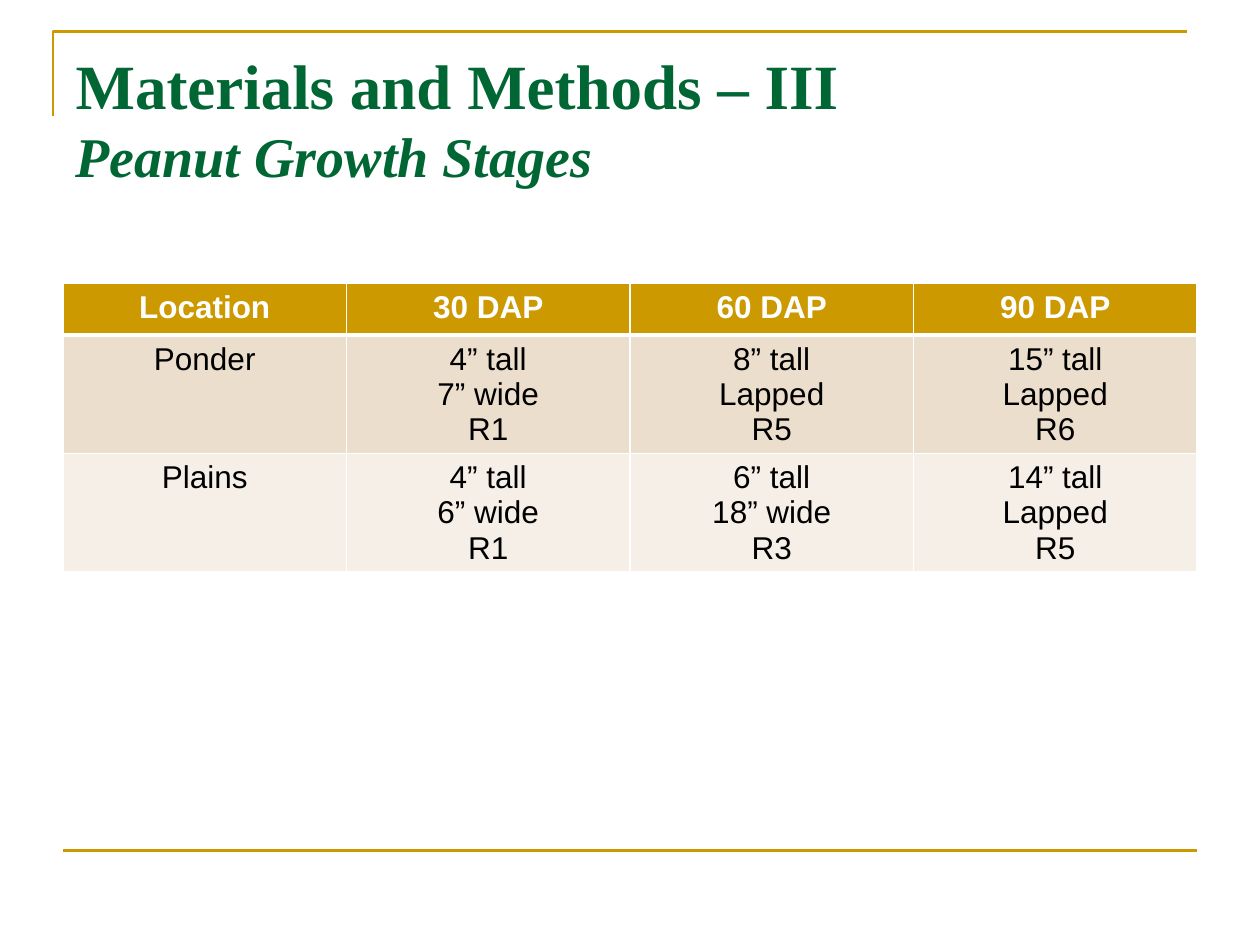
from pptx import Presentation
from pptx.dml.color import RGBColor
from pptx.enum.shapes import MSO_CONNECTOR
from pptx.enum.text import MSO_ANCHOR, PP_ALIGN
from pptx.oxml import parse_xml
from pptx.oxml.ns import nsdecls
from pptx.util import Inches, Pt
from lxml.etree import SubElement
from pptx.oxml.ns import qn

GOLD = RGBColor(0xCC, 0x99, 0x00)
GREEN = RGBColor(0x00, 0x66, 0x33)
WHITE = RGBColor(0xFF, 0xFF, 0xFF)
BLACK = RGBColor(0x00, 0x00, 0x00)
BANDS = [RGBColor(0xEC, 0xDE, 0xCC), RGBColor(0xF6, 0xEF, 0xE7)]

MARGIN, CONTENT_W = 0.5, 9
ROW_H = 0.41
GROWTH_STAGES = [
    ["Location", "30 DAP", "60 DAP", "90 DAP"],
    ["Ponder", "4” tall\n7” wide\nR1", "8” tall\nLapped\nR5", "15” tall\nLapped\nR6"],
    ["Plains", "4” tall\n6” wide\nR1", "6” tall\n18” wide\nR3", "14” tall\nLapped\nR5"],
]


def style_run(r, font, size, color, bold=False, italic=False):
    f = r.font
    f.name, f.size, f.bold, f.italic = font, Pt(size), bold, italic
    f.color.rgb = color


def style_line(sp):
    sp.line.color.rgb = GOLD
    sp.line.width = Pt(1.5)


def add_corner(slide):
    """Draw the open frame above and left of the title."""
    builder = slide.shapes.build_freeform(Inches(0.42), Inches(0.92))
    builder.add_line_segments(
        [(Inches(0.42), Inches(0.25)), (Inches(9.42), Inches(0.25))], close=False)
    sp = builder.convert_to_shape()
    sp.fill.background()
    sp.shadow.inherit = False
    style_line(sp)


def add_rule(slide, y):
    line = slide.shapes.add_connector(
        MSO_CONNECTOR.STRAIGHT, Inches(MARGIN), Inches(y),
        Inches(MARGIN + CONTENT_W), Inches(y))
    style_line(line)
    SubElement(line._element.spPr, qn("a:effectLst"))


def set_title(slide, heading, subheading):
    title = slide.shapes.title
    title.left, title.top = Inches(MARGIN), Inches(0.3)
    title.width, title.height = Inches(CONTENT_W), Inches(1.25)
    tf = title.text_frame
    tf.vertical_anchor = MSO_ANCHOR.BOTTOM
    tf.text = f"{heading}\v{subheading}"
    p = tf.paragraphs[0]
    p.alignment = PP_ALIGN.LEFT
    style_run(p.runs[0], "Times New Roman", 36, GREEN, bold=True)
    style_run(p.runs[1], "Times New Roman", 32, GREEN, bold=True, italic=True)


def set_borders(cell, bottom):
    tcPr = cell._tc.get_or_add_tcPr()
    widths = {"lnL": 1, "lnR": 1, "lnT": 1, "lnB": bottom}
    for i, (tag, width) in enumerate(widths.items()):
        tcPr.insert(i, parse_xml(
            f'<a:{tag} {nsdecls("a")} w="{Pt(width)}"><a:solidFill>'
            f'<a:srgbClr val="{WHITE}"/></a:solidFill></a:{tag}>'))


def fill_cell(cell, text, fill, color, bold):
    cell.text = text
    cell.fill.solid()
    cell.fill.fore_color.rgb = fill
    for p in cell.text_frame.paragraphs:
        p.alignment = PP_ALIGN.CENTER
        style_run(p.runs[0], "Arial", 18, color, bold)


def add_growth_table(slide, rows):
    table = slide.shapes.add_table(
        len(rows), len(rows[0]), Inches(MARGIN), Inches(2.25),
        Inches(CONTENT_W), Inches(ROW_H * len(rows))).table
    for i, row in enumerate(rows):
        header = i == 0
        fill = GOLD if header else BANDS[(i - 1) % len(BANDS)]
        for j, text in enumerate(row):
            cell = table.cell(i, j)
            fill_cell(cell, text, fill, WHITE if header else BLACK, header)
            set_borders(cell, bottom=3 if header else 1)


def main():
    prs = Presentation()
    prs.slide_width, prs.slide_height = Inches(10), Inches(7.5)
    slide = prs.slides.add_slide(prs.slide_layouts[5])
    add_corner(slide)
    add_rule(slide, 6.75)
    set_title(slide, "Materials and Methods – III", "Peanut Growth Stages")
    add_growth_table(slide, GROWTH_STAGES)
    prs.save("out.pptx")


if __name__ == "__main__":
    main()
